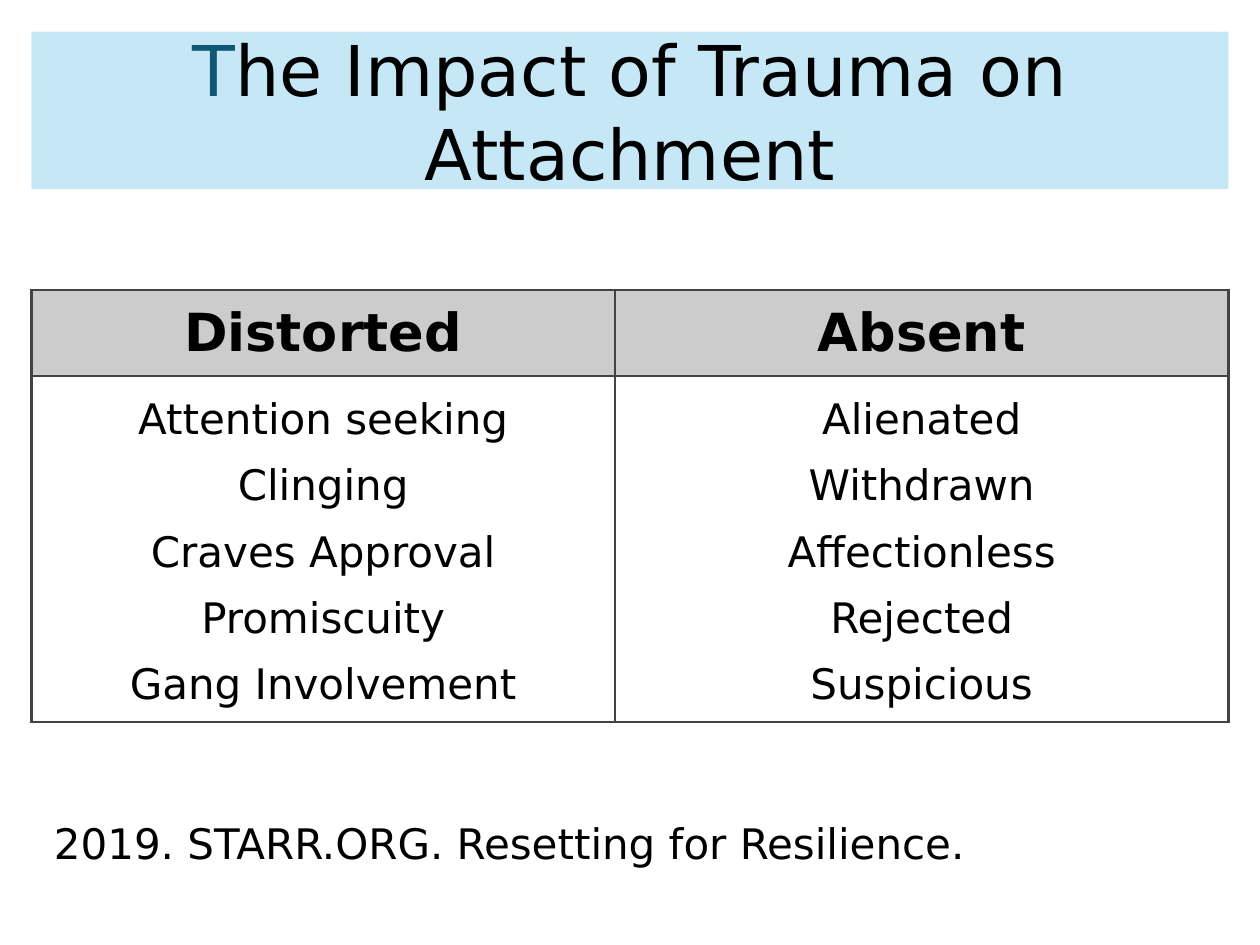
from dataclasses import dataclass

from lxml import etree
from pptx import Presentation
from pptx.dml.color import RGBColor
from pptx.enum.shapes import MSO_SHAPE
from pptx.enum.text import MSO_ANCHOR, PP_ALIGN
from pptx.oxml.ns import qn
from pptx.util import Emu, Pt

RECT = MSO_SHAPE.RECTANGLE
MIDDLE = MSO_ANCHOR.MIDDLE
TOP = MSO_ANCHOR.TOP
CENTER = PP_ALIGN.CENTER
LEFT = PP_ALIGN.LEFT
EMU_PER_PX = 9144


def px(n):
    return Emu(n * EMU_PER_PX)


@dataclass(frozen=True)
class Theme:
    font: str = "DejaVu Sans"
    text: str = "000000"
    accent: str = "105775"
    banner: str = "A9DCF2"
    banner_alpha: int = 67
    header: str = "CCCCCC"
    border: str = "434343"
    border_pt: float = 1.5
    title_pt: int = 40
    header_pt: int = 30
    body_pt: int = 24


class SlideBuilder:
    def __init__(self, slide, theme):
        self.slide = slide
        self.theme = theme

    def style(self, p, size, align, bold=False):
        p.alignment = align
        p.font.name = self.theme.font
        p.font.size = Pt(size)
        p.font.bold = bold
        p.font.color.rgb = RGBColor.from_string(self.theme.text)

    def banner(self, box, initial, rest):
        sp = self.slide.shapes.add_shape(RECT, *map(px, box))
        sp.shadow.inherit = False
        sp.line.fill.background()
        sp.fill.solid()
        sp.fill.fore_color.rgb = RGBColor.from_string(self.theme.banner)
        color = sp.fill._xPr.find(".//" + qn("a:srgbClr"))
        etree.SubElement(color, qn("a:alpha"), val=str(self.theme.banner_alpha * 1000))
        tf = sp.text_frame
        tf.word_wrap = True
        tf.vertical_anchor = MIDDLE
        p = tf.paragraphs[0]
        self.style(p, self.theme.title_pt, CENTER)
        for text, color in ((initial, self.theme.accent), (rest, self.theme.text)):
            r = p.add_run()
            r.text = text
            r.font.color.rgb = RGBColor.from_string(color)

    def borders(self, cell):
        tc_pr = cell._tc.get_or_add_tcPr()
        for side in ("lnL", "lnR", "lnT", "lnB"):
            ln = etree.SubElement(tc_pr, qn(f"a:{side}"), w=str(Pt(self.theme.border_pt)))
            fill = etree.SubElement(ln, qn("a:solidFill"))
            etree.SubElement(fill, qn("a:srgbClr"), val=self.theme.border)

    def cell(self, cell, lines, is_header):
        self.borders(cell)
        cell.margin_left = cell.margin_right = px(10)
        cell.margin_top = cell.margin_bottom = px(10)
        cell.vertical_anchor = TOP
        if is_header:
            cell.fill.solid()
            cell.fill.fore_color.rgb = RGBColor.from_string(self.theme.header)
        else:
            cell.fill.background()
        tf = cell.text_frame
        tf.text = "\n".join(lines)
        size = self.theme.header_pt if is_header else self.theme.body_pt
        for p in tf.paragraphs:
            self.style(p, size, CENTER, is_header)
            if not is_header:
                p.line_spacing = 1.14
                p.space_after = Pt(6)

    def table(self, left, top, widths, heights, columns):
        table = self.slide.shapes.add_table(
            len(heights), len(widths), px(left), px(top), px(sum(widths)), px(sum(heights))
        ).table
        table.first_row = table.horz_banding = False
        for row, height in zip(table.rows, heights):
            row.height = px(height)
        for i, (width, (heading, items)) in enumerate(zip(widths, columns.items())):
            table.columns[i].width = px(width)
            self.cell(table.cell(0, i), [heading], True)
            self.cell(table.cell(1, i), items, False)

    def text(self, box, text):
        tf = self.slide.shapes.add_textbox(*map(px, box)).text_frame
        tf.word_wrap = True
        tf.margin_left = tf.margin_right = px(10)
        tf.margin_top = tf.margin_bottom = px(10)
        p = tf.paragraphs[0]
        p.text = text
        self.style(p, self.theme.body_pt, LEFT)


def main():
    prs = Presentation()
    prs.slide_width, prs.slide_height = px(1000), px(750)
    s = SlideBuilder(prs.slides.add_slide(prs.slide_layouts[6]), Theme())
    s.banner((25, 25, 950, 125), "T", "he Impact of Trauma on Attachment")
    s.table(25, 230, (463, 487), (68, 274), {
        "Distorted": ["Attention seeking", "Clinging", "Craves Approval",
                      "Promiscuity", "Gang Involvement"],
        "Absent": ["Alienated", "Withdrawn", "Affectionless", "Rejected", "Suspicious"],
    })
    s.text((33, 639, 760, 56), "2019. STARR.ORG. Resetting for Resilience.")
    prs.save("out.pptx")


if __name__ == "__main__":
    main()
